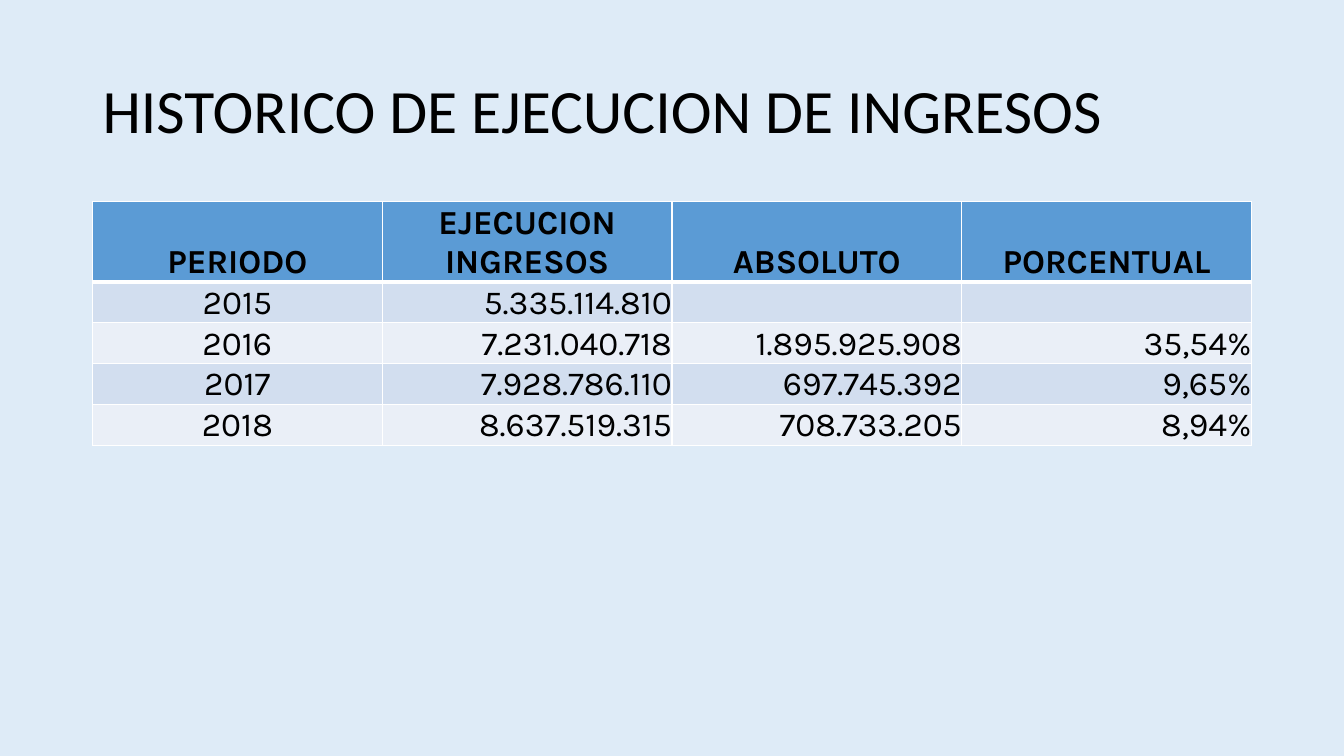
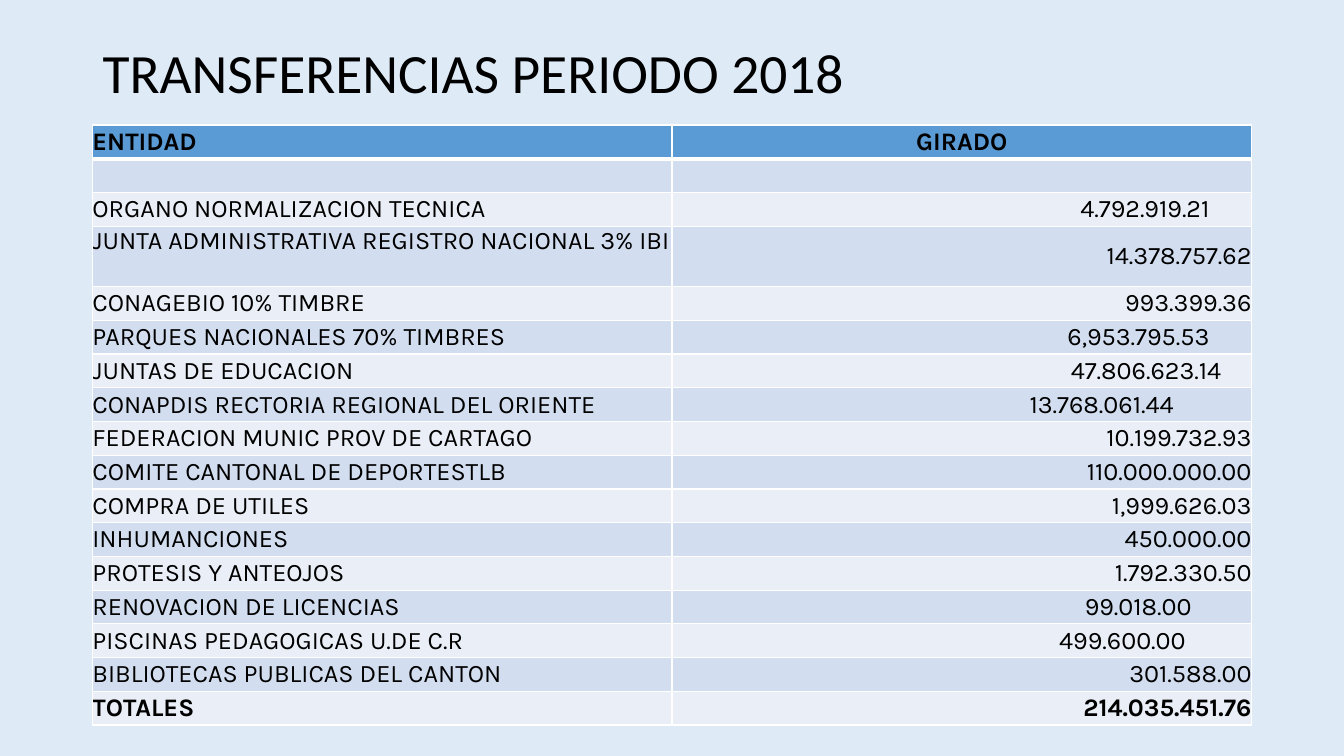
from dataclasses import dataclass

from lxml import etree
from pptx import Presentation
from pptx.dml.color import RGBColor
from pptx.enum.text import MSO_ANCHOR as ANCHOR, MSO_AUTO_SIZE, PP_ALIGN as ALIGN
from pptx.oxml.ns import qn
from pptx.util import Cm, Pt


@dataclass(frozen=True)
class Theme:
    background: str = "DEEBF7"
    header: str = "5B9BD5"
    bands: tuple = ("D2DEEF", "EAEFF7")
    border: str = "FFFFFF"
    text: str = "000000"
    title_font: str = "Calibri"
    table_font: str = "Karla"
    title_size: float = 44
    small_title_size: float = 39.6
    table_size: float = 24
    small_table_size: float = 18
    left: float = 2.33
    width: float = 29.21


def rgb(code):
    return RGBColor.from_string(code)


class Deck:
    def __init__(self, theme):
        self.theme = theme
        self.prs = Presentation()
        self.prs.slide_width, self.prs.slide_height = Cm(33.87), Cm(19.05)
        fill = self.prs.slide_master.background.fill
        fill.solid()
        fill.fore_color.rgb = rgb(theme.background)
        self.s = None

    def slide(self, title, height, size):
        t = self.theme
        self.s = self.prs.slides.add_slide(self.prs.slide_layouts[5])
        sp = self.s.shapes.title
        sp.left, sp.top, sp.width, sp.height = Cm(t.left), Cm(1.01), Cm(t.width), Cm(height)
        tf = sp.text_frame
        tf.auto_size = MSO_AUTO_SIZE.NONE
        tf.word_wrap = True
        tf.vertical_anchor = ANCHOR.MIDDLE
        self.add_text(tf, title, font=t.title_font, size=size, align=ALIGN.LEFT, spacing=0.9)

    def add_text(self, tf, text, *, font, size, align, bold=False, spacing=None):
        p = tf.paragraphs[0]
        p.alignment = align
        p.line_spacing = spacing
        r = p.add_run()
        r.text = text
        r.font.name, r.font.size, r.font.bold = font, Pt(size), bold
        r.font.color.rgb = rgb(self.theme.text)

    def borders(self, cell, bottom):
        """Outline a cell; must run before its fill is set, as the schema orders them."""
        tc_pr = cell._tc.get_or_add_tcPr()
        for side, points in (("L", 1), ("R", 1), ("T", 1), ("B", bottom)):
            ln = etree.SubElement(tc_pr, qn(f"a:ln{side}"), w=str(Pt(points)))
            fill = etree.SubElement(ln, qn("a:solidFill"))
            etree.SubElement(fill, qn("a:srgbClr"), val=self.theme.border)

    def table(self, rows, *, top, heights, size, anchor, head_aligns, aligns,
              total=False, indents=None, top_cells=()):
        """Draw a banded table; indents maps a row to the right margin of its last cell."""
        t = self.theme
        indents = indents or {}
        n_cols = len(rows[0])
        table = self.s.shapes.add_table(len(rows), n_cols, Cm(t.left), Cm(top),
                                        Cm(t.width), Cm(sum(heights))).table
        for col in table.columns:
            col.width = Cm(t.width / n_cols)
        for i, (row, height) in enumerate(zip(rows, heights)):
            table.rows[i].height = Cm(height)
            head = i == 0
            bold = head or (total and i == len(rows) - 1)
            for j, text in enumerate(row):
                cell = table.cell(i, j)
                self.borders(cell, bottom=3 if head else 1)
                cell.fill.solid()
                cell.fill.fore_color.rgb = rgb(t.header if head else t.bands[(i - 1) % 2])
                cell.margin_left = cell.margin_top = cell.margin_bottom = 0
                cell.margin_right = Cm(indents.get(i, 0) if j == n_cols - 1 else 0)
                cell.vertical_anchor = ANCHOR.TOP if (i, j) in top_cells else anchor
                if text:
                    self.add_text(cell.text_frame, text, font=t.table_font, size=size,
                                  align=(head_aligns if head else aligns)[j], bold=bold)


INCOME = [
    ("PERIODO", "EJECUCION INGRESOS", "ABSOLUTO", "PORCENTUAL"),
    ("2015", "5.335.114.810", "", ""),
    ("2016", "7.231.040.718", "1.895.925.908", "35,54%"),
    ("2017", "7.928.786.110", "697.745.392", "9,65%"),
    ("2018", "8.637.519.315", "708.733.205", "8,94%"),
]

TRANSFERS = [
    ("ENTIDAD", "GIRADO"),
    ("", ""),
    ("ORGANO NORMALIZACION TECNICA", "4.792.919.21"),
    ("JUNTA ADMINISTRATIVA REGISTRO NACIONAL 3% IBI", "14.378.757.62"),
    ("CONAGEBIO 10% TIMBRE", "993.399.36"),
    ("PARQUES NACIONALES 70% TIMBRES", "6,953.795.53"),
    ("JUNTAS DE EDUCACION", "47.806.623.14"),
    ("CONAPDIS RECTORIA REGIONAL DEL ORIENTE", "13.768.061.44"),
    ("FEDERACION MUNIC PROV DE CARTAGO", "10.199.732.93"),
    ("COMITE CANTONAL DE DEPORTESTLB", "110.000.000.00"),
    ("COMPRA DE UTILES", "1,999.626.03"),
    ("INHUMANCIONES", "450.000.00"),
    ("PROTESIS Y ANTEOJOS", "1.792.330.50"),
    ("RENOVACION DE LICENCIAS", "99.018.00"),
    ("PISCINAS PEDAGOGICAS U.DE C.R", "499.600.00"),
    ("BIBLIOTECAS PUBLICAS DEL CANTON", "301.588.00"),
    ("TOTALES", "214.035.451.76"),
]


def main():
    theme = Theme()
    deck = Deck(theme)

    deck.slide("HISTORICO DE EJECUCION DE INGRESOS", 3.68, theme.title_size)
    deck.table(INCOME, top=5.08, heights=[2.02] + [1.03] * 4, size=theme.table_size,
               anchor=ANCHOR.BOTTOM, head_aligns=[ALIGN.CENTER] * 4,
               aligns=[ALIGN.CENTER] + [ALIGN.RIGHT] * 3)

    deck.slide("TRANSFERENCIAS PERIODO 2018", 1.8, theme.small_title_size)
    registry = 3
    heights = [1.52 if i == registry else 0.85 for i in range(len(TRANSFERS))]
    deck.table(TRANSFERS, top=3.15, heights=heights, size=theme.small_table_size,
               anchor=ANCHOR.MIDDLE, head_aligns=[ALIGN.LEFT, ALIGN.CENTER],
               aligns=[ALIGN.JUSTIFY, ALIGN.RIGHT], total=True,
               indents={2: 1.06, 5: 1.06, 6: 0.76, 7: 1.96, 13: 1.51, 14: 1.66},
               top_cells={(registry, 0)})

    deck.prs.save("out.pptx")


if __name__ == "__main__":
    main()
